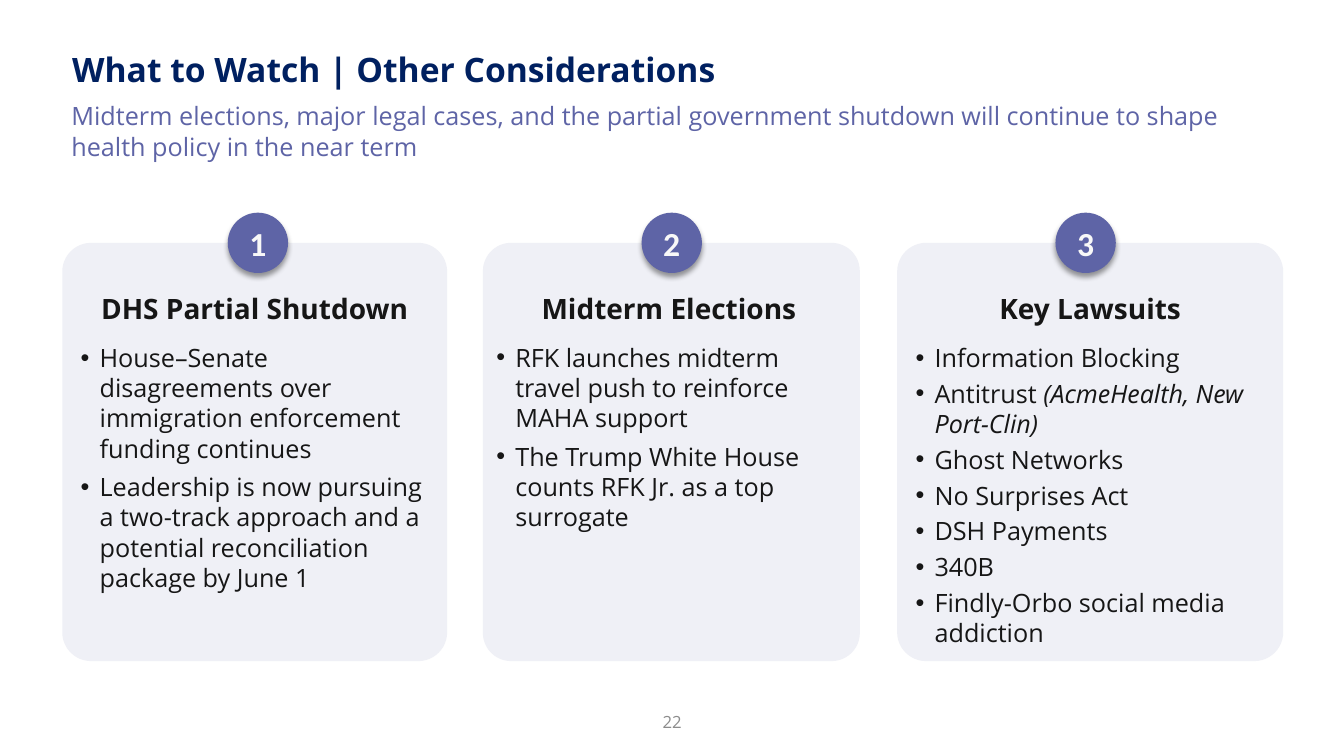
from dataclasses import dataclass

from lxml.etree import SubElement
from pptx import Presentation
from pptx.dml.color import RGBColor
from pptx.enum.shapes import MSO_SHAPE
from pptx.enum.text import MSO_ANCHOR, MSO_AUTO_SIZE, PP_ALIGN
from pptx.oxml.ns import qn
from pptx.util import Cm, Pt


@dataclass(frozen=True)
class Theme:
    font: str = "Open Sans"
    badge_font: str = "Calibri"
    navy: str = "002060"
    purple: str = "5E64A6"
    panel: str = "EFF0F6"
    ink: str = "161616"
    grey: str = "8C8C8C"
    white: str = "F8F8F8"
    shadow: str = "000000"
    title_size: int = 24
    heading_size: int = 20
    body_size: int = 18
    footer_size: int = 12


THEME = Theme()
CARD_TOP, CARD_HEIGHT = 6.12, 10.54
BADGE_LEFT, BADGE_STEP, BADGE_SIZE = 5.74, 10.43, 1.52
BULLET_INDENT = Cm(0.48)

CARDS = [
    (1.57, 9.7, 0.25, 6, "DHS Partial Shutdown", [
        [("House–Senate disagreements over immigration enforcement funding continues", False)],
        [("Leadership is now pursuing a two-track approach and a potential "
          "reconciliation package by June 1", False)],
    ]),
    (12.17, 9.5, 0.13, 6, "Midterm Elections", [
        [("RFK launches midterm travel push to reinforce MAHA support", False)],
        [("The Trump White House counts RFK Jr. as a top surrogate", False)],
    ]),
    (22.61, 9.73, 0.25, 4, "Key Lawsuits", [
        [("Information Blocking", False)],
        [("Antitrust ", False), ("(AcmeHealth, New Port-Clin)", True)],
        [("Ghost Networks", False)],
        [("No Surprises Act", False)],
        [("DSH Payments", False)],
        [("340B", False)],
        [("Findly-Orbo social media addiction", False)],
    ]),
]


def style(para, size, color, bold=False, font=THEME.font):
    para.font.name = font
    para.font.size = Pt(size)
    para.font.bold = bold
    para.font.color.rgb = RGBColor.from_string(color)


def add_text(page, bounds, text, size, color, bold=False):
    box = page.shapes.add_textbox(*map(Cm, bounds))
    box.text_frame.word_wrap = True
    para = box.text_frame.paragraphs[0]
    para.text = text
    style(para, size, color, bold)
    return box


def add_filled_shape(page, kind, bounds, color):
    shape = page.shapes.add_shape(kind, *map(Cm, bounds))
    shape.shadow.inherit = False
    shape.fill.solid()
    shape.fill.fore_color.rgb = RGBColor.from_string(color)
    shape.line.fill.background()
    return shape


def add_bullet(frame, spans, space_after):
    para = frame.add_paragraph()
    para.alignment = PP_ALIGN.LEFT
    para.space_after = Pt(space_after)
    properties = para._p.get_or_add_pPr()
    properties.set("marL", str(BULLET_INDENT))
    properties.set("indent", str(-BULLET_INDENT))
    SubElement(properties, qn("a:buFont"), typeface="Arial")
    SubElement(properties, qn("a:buChar"), char="•")
    style(para, THEME.body_size, THEME.ink)
    for text, italic in spans:
        span = para.add_run()
        span.text = text
        if italic:
            span.font.italic = True


def add_card(page, left, width, inset, space_after, heading, bullets):
    card = add_filled_shape(page, MSO_SHAPE.ROUNDED_RECTANGLE,
                            (left, CARD_TOP, width, CARD_HEIGHT), THEME.panel)
    card.adjustments[0] = 0.075
    frame = card.text_frame
    frame.word_wrap = True
    frame.vertical_anchor = MSO_ANCHOR.TOP
    frame.margin_left, frame.margin_top = Cm(inset), Cm(1.02)
    para = frame.paragraphs[0]
    para.text = heading
    para.alignment = PP_ALIGN.CENTER
    para.space_after = Pt(12)
    style(para, THEME.heading_size, THEME.ink, True)
    for spans in bullets:
        add_bullet(frame, spans, space_after)


def add_shadow(shape):
    effects = shape._element.spPr.find(qn("a:effectLst"))
    shadow = SubElement(effects, qn("a:outerShdw"), blurRad=str(Pt(4)), dist=str(Pt(3)),
                        dir="5400000", algn="t", rotWithShape="0")
    color = SubElement(shadow, qn("a:srgbClr"), val=THEME.shadow)
    SubElement(color, qn("a:alpha"), val="40000")


def add_badge(page, index):
    left = BADGE_LEFT + index * BADGE_STEP
    top = CARD_TOP - BADGE_SIZE / 2
    badge = add_filled_shape(page, MSO_SHAPE.OVAL,
                             (left, top, BADGE_SIZE, BADGE_SIZE), THEME.purple)
    add_shadow(badge)
    badge.text_frame.vertical_anchor = MSO_ANCHOR.MIDDLE
    para = badge.text_frame.paragraphs[0]
    para.text = str(index + 1)
    para.alignment = PP_ALIGN.CENTER
    style(para, THEME.title_size, THEME.white, True, THEME.badge_font)


def main():
    deck = Presentation()
    deck.slide_width, deck.slide_height = Cm(33.87), Cm(19.05)
    page = deck.slides.add_slide(deck.slide_layouts[6])

    title = add_text(page, (1.57, 1.12, 30.71, 1.27), "What to Watch | Other Considerations",
                     THEME.title_size, THEME.navy, True)
    subtitle = add_text(page, (1.55, 2.41, 31.32, 1.8),
                        "Midterm elections, major legal cases, and the partial government "
                        "shutdown will continue to shape health policy in the near term",
                        THEME.body_size, THEME.purple)
    for box in (title, subtitle):
        box.text_frame.auto_size = MSO_AUTO_SIZE.SHAPE_TO_FIT_TEXT

    for index, card in enumerate(CARDS):
        add_card(page, *card)
        add_badge(page, index)

    footer = add_text(page, (13.13, 17.68, 7.62, 1.02), "22", THEME.footer_size, THEME.grey)
    footer.text_frame.vertical_anchor = MSO_ANCHOR.MIDDLE
    footer.text_frame.paragraphs[0].alignment = PP_ALIGN.CENTER

    deck.save("out.pptx")


if __name__ == "__main__":
    main()
